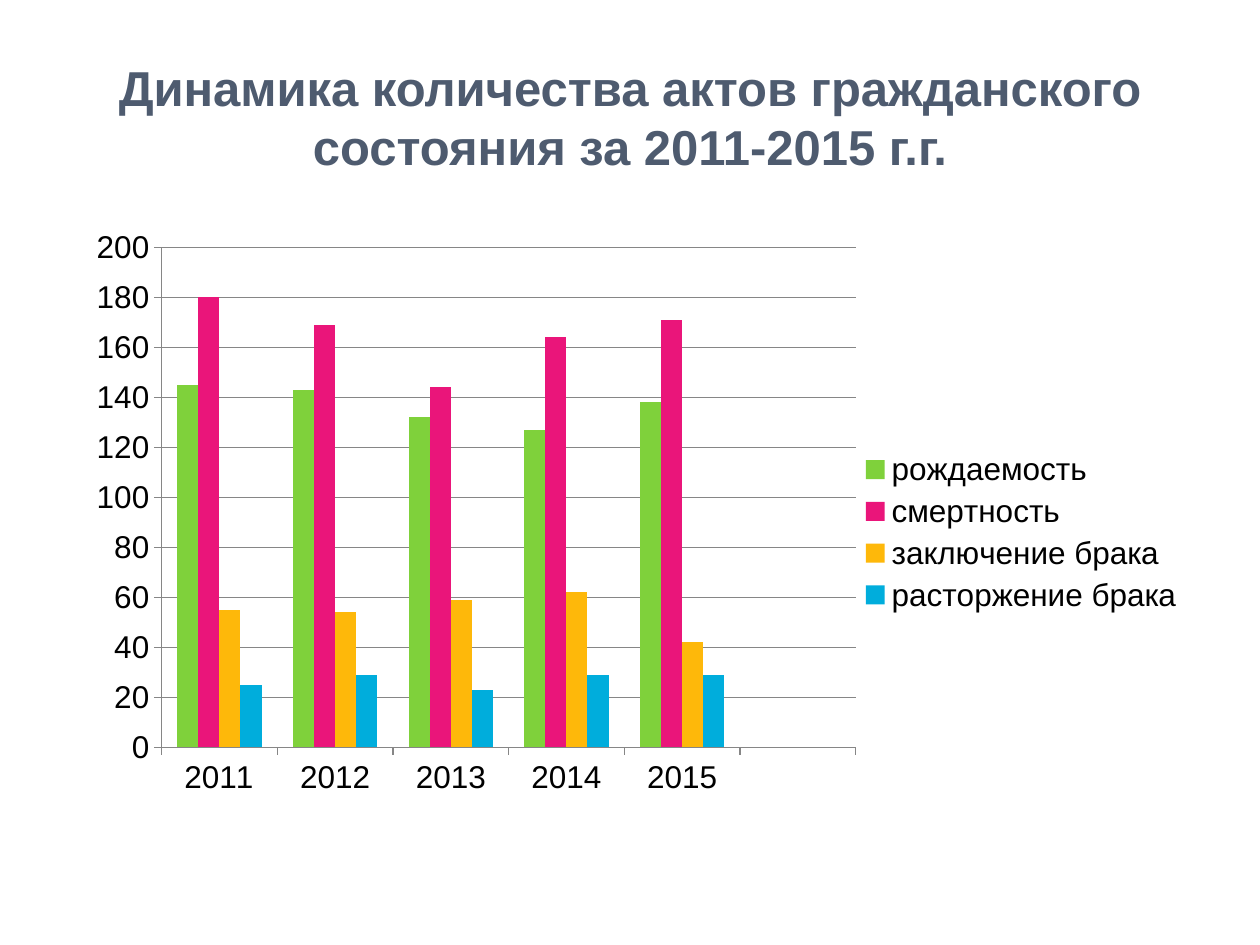
from lxml import etree
from pptx import Presentation
from pptx import util as u
from pptx.chart.data import CategoryChartData
from pptx.dml.color import RGBColor
from pptx.enum import chart as ch, text
from pptx.oxml.ns import qn

TITLE = "Динамика количества актов гражданского состояния за 2011-2015 г.г."
YEARS = ["2011", "2012", "2013", "2014", "2015", ""]
SERIES = [
    ("рождаемость", "7FD13B", [145, 143, 132, 127, 138, None]),
    ("смертность", "EA157A", [180, 169, 144, 164, 171, None]),
    ("заключение брака", "FEB80A", [55, 54, 59, 62, 42, None]),
    ("расторжение брака", "00ADDC", [25, 29, 23, 29, 29, None]),
]
PLOT = {"x": 0.087, "y": 0.043, "w": 0.612, "h": 0.802}
W, H = u.Inches(10), u.Inches(7.5)
MARGIN = 0.05


def set_font(font, size, color, bold=False):
    font.name = "Arial"
    font.size = u.Pt(size)
    font.bold = bold
    font.color.rgb = RGBColor.from_string(color)


def place(top, height):
    return int(W * MARGIN), int(H * top), int(W * (1 - 2 * MARGIN)), int(H * height)


def set_plot_area(chart, shares):
    area = chart.plots[0]._element.getparent()
    for old in area.findall(qn("c:layout")):
        area.remove(old)
    layout = etree.Element(qn("c:layout"))
    area.insert(0, layout)
    manual = etree.SubElement(layout, qn("c:manualLayout"))
    modes = {"layoutTarget": "inner", "xMode": "edge", "yMode": "edge"}
    for tag, value in {**modes, **shares}.items():
        etree.SubElement(manual, qn("c:" + tag)).set("val", str(value))


prs = Presentation()
prs.slide_width, prs.slide_height = W, H
s = prs.slides.add_slide(prs.slide_layouts[5])

title = s.shapes.title
title.left, title.top, title.width, title.height = place(0.04, 1 / 6)
tf = title.text_frame
tf.text = TITLE
tf.word_wrap = True
tf.vertical_anchor = text.MSO_ANCHOR.MIDDLE
p = tf.paragraphs[0]
p.alignment = text.PP_ALIGN.CENTER
set_font(p.runs[0].font, 28, "4E5B6F", True)

data = CategoryChartData()
data.categories = YEARS
for name, _, values in SERIES:
    data.add_series(name, values)
frame = s.shapes.add_chart(ch.XL_CHART_TYPE.COLUMN_CLUSTERED, *place(7 / 30, 0.66), data)
chart = frame.chart
chart.has_title = False
set_font(chart.font, 18, "000000")
chart.has_legend = True
chart.legend.position = ch.XL_LEGEND_POSITION.RIGHT
chart.legend.include_in_layout = False
set_plot_area(chart, PLOT)

plot = chart.plots[0]
plot.vary_by_categories = False
plot.gap_width, plot.overlap = 150, 0
for series, (_, color, _) in zip(plot.series, SERIES):
    series.format.fill.solid()
    series.format.fill.fore_color.rgb = RGBColor.from_string(color)

value_axis = chart.value_axis
value_axis.minimum_scale, value_axis.maximum_scale, value_axis.major_unit = 0, 200, 20
value_axis.has_major_gridlines = True
for axis in (chart.category_axis, value_axis):
    axis.major_tick_mark = ch.XL_TICK_MARK.OUTSIDE
for part in (chart.category_axis, value_axis, value_axis.major_gridlines):
    part.format.line.color.rgb = RGBColor.from_string("868686")
    part.format.line.width = u.Pt(0.75)

prs.save("out.pptx")
